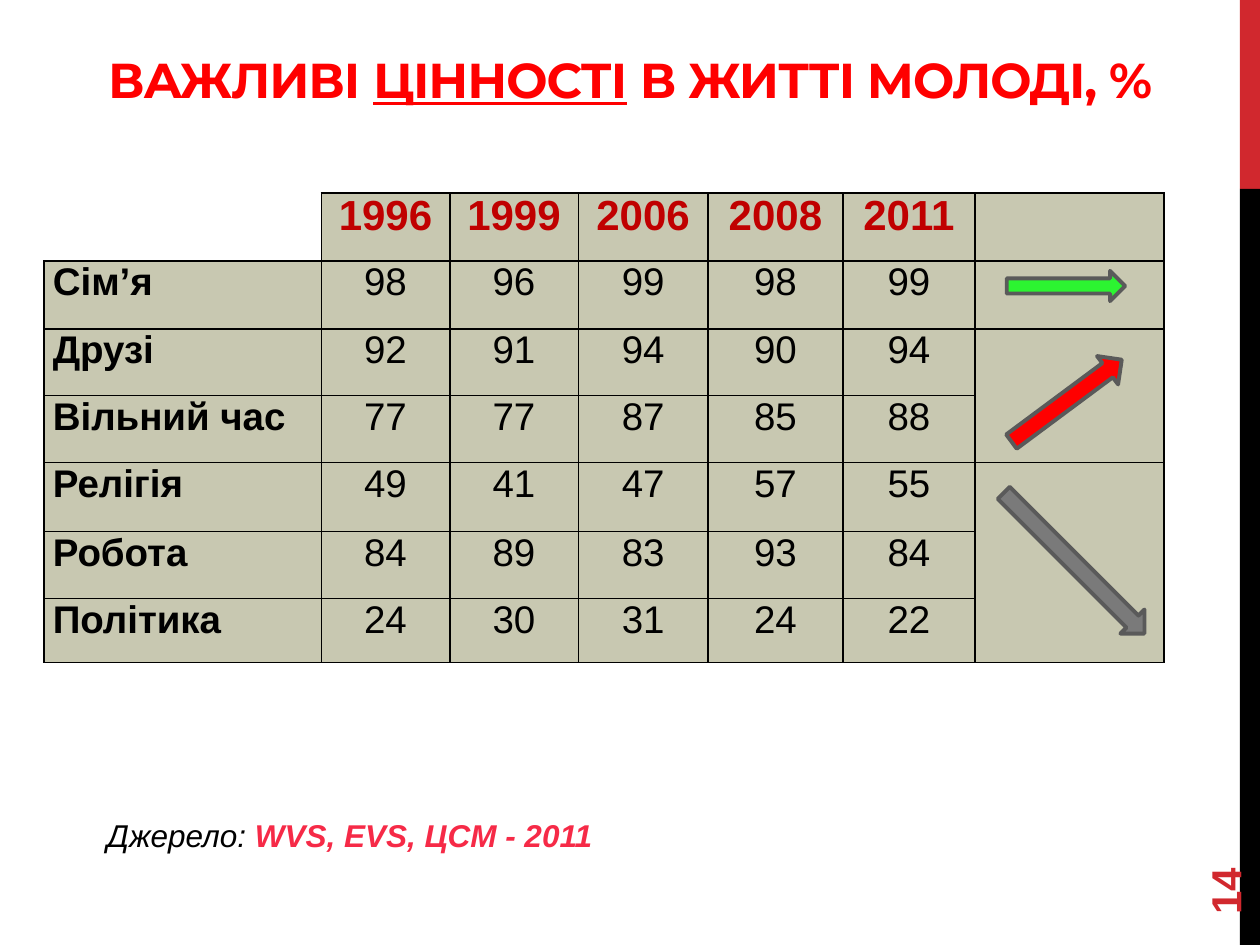
from dataclasses import dataclass
from typing import Optional

from lxml.etree import SubElement
from pptx import Presentation
from pptx.dml.color import RGBColor
from pptx.enum.shapes import MSO_SHAPE
from pptx.enum.text import MSO_ANCHOR, PP_ALIGN
from pptx.oxml.ns import qn
from pptx.util import Inches, Pt

GRID_COLUMNS, GRID_ROWS = 100, 75
SLIDE_WIDTH, SLIDE_HEIGHT = Inches(10), Inches(7.5)
BLACK, WHITE, RED, ACCENT = "000000", "FFFFFF", "FF0000", "D1282E"
CELL_FILL, YEAR_COLOR, ARROW_OUTLINE = "C8C8B1", "C00000", "5A5A5A"

YEARS = ["1996", "1999", "2006", "2008", "2011"]
VALUES = {
    "Сім’я": [98, 96, 99, 98, 99],
    "Друзі": [92, 91, 94, 90, 94],
    "Вільний час": [77, 77, 87, 85, 88],
    "Релігія": [49, 41, 47, 57, 55],
    "Робота": [84, 89, 83, 93, 84],
    "Політика": [24, 30, 31, 24, 22],
}
COLUMN_SPANS = [22, 10.2, 10.2, 10.3, 10.7, 10.5, 15]
ROW_SPANS = [5.4, 5.4, 5.3, 5.3, 5.5, 5.3, 5.1]
TREND_MERGES = [(2, 3), (4, 6)]


@dataclass
class Area:
    column: float
    row: float
    columns: float
    rows: float

    def place(self) -> tuple:
        return (across(self.column), down(self.row),
                across(self.columns), down(self.rows))


@dataclass
class Block:
    area: Area
    kind: MSO_SHAPE
    fill: str
    outline: Optional[str] = None
    rotation: float = 0


@dataclass
class Phrase:
    text: str
    size: float
    color: str = BLACK
    font: str = "Arial"
    bold: bool = False
    italic: bool = False
    underline: bool = False
    spacing: int = 0


@dataclass
class Caption:
    area: Area
    phrases: list
    align: PP_ALIGN = PP_ALIGN.LEFT
    anchor: MSO_ANCHOR = MSO_ANCHOR.TOP
    rotation: float = 0


def across(columns: float) -> int:
    return round(SLIDE_WIDTH * columns / GRID_COLUMNS)


def down(rows: float) -> int:
    return round(SLIDE_HEIGHT * rows / GRID_ROWS)


def color(value: str) -> RGBColor:
    return RGBColor.from_string(value)


def draw_block(slide, block: Block) -> None:
    shape = slide.shapes.add_shape(block.kind, *block.area.place())
    shape.shadow.inherit = False
    shape.rotation = block.rotation
    shape.fill.solid()
    shape.fill.fore_color.rgb = color(block.fill)
    if block.outline:
        shape.line.color.rgb = color(block.outline)
        shape.line.width = Pt(2.25)
    else:
        shape.line.fill.background()


def write(paragraph, phrases: list, align: PP_ALIGN) -> None:
    paragraph.alignment = align
    for phrase in phrases:
        run = paragraph.add_run()
        run.text = phrase.text
        font = run.font
        font.size, font.name = Pt(phrase.size), phrase.font
        font.bold, font.italic = phrase.bold, phrase.italic
        font.underline = phrase.underline
        font.color.rgb = color(phrase.color)
        if phrase.spacing:
            run._r.get_or_add_rPr().set("spc", str(phrase.spacing))


def draw_caption(slide, caption: Caption) -> None:
    box = slide.shapes.add_textbox(*caption.area.place())
    box.rotation = caption.rotation
    box.text_frame.word_wrap = True
    box.text_frame.vertical_anchor = caption.anchor
    write(box.text_frame.paragraphs[0], caption.phrases, caption.align)


def border(cell, left: str = BLACK, right: str = BLACK,
           top: str = BLACK, bottom: str = BLACK) -> None:
    properties = cell._tc.get_or_add_tcPr()
    for side, value in zip("LRTB", (left, right, top, bottom)):
        edge = SubElement(properties, qn(f"a:ln{side}"), w=str(Pt(1)))
        SubElement(SubElement(edge, qn("a:solidFill")), qn("a:srgbClr"), val=value)


def cell_phrase(text: str, row: int, column: int) -> Phrase:
    if row == 0:
        return Phrase(text, 24, YEAR_COLOR, bold=True)
    return Phrase(text, 22, bold=column == 0)


def draw_values(slide, area: Area) -> None:
    lines = [["", *YEARS, ""]]
    lines += [[name, *map(str, shares), ""] for name, shares in VALUES.items()]
    table = slide.shapes.add_table(len(lines), len(lines[0]), *area.place()).table
    table.first_row = table.horz_banding = False
    for column, span in zip(table.columns, COLUMN_SPANS):
        column.width = across(span)
    for row, span in zip(table.rows, ROW_SPANS):
        row.height = down(span)
    for r, line in enumerate(lines):
        for c, text in enumerate(line):
            cell = table.cell(r, c)
            if r == c == 0:
                border(cell, left=WHITE, top=WHITE)
                cell.fill.background()
                continue
            border(cell)
            cell.fill.solid()
            cell.fill.fore_color.rgb = color(CELL_FILL)
            if text:
                cell.margin_left = cell.margin_right = across(0.7)
                cell.margin_top = cell.margin_bottom = 0
                align = PP_ALIGN.CENTER if c else PP_ALIGN.LEFT
                write(cell.text_frame.paragraphs[0], [cell_phrase(text, r, c)], align)
    trend = len(COLUMN_SPANS) - 1
    for first, last in TREND_MERGES:
        table.cell(first, trend).merge(table.cell(last, trend))


def title_phrase(text: str, underline: bool = False) -> Phrase:
    return Phrase(text, 28, RED, "Montserrat", bold=True,
                  underline=underline, spacing=-60)


SIDE_BARS = [
    Block(Area(98.4, 0, 1.6, 15), MSO_SHAPE.RECTANGLE, ACCENT),
    Block(Area(98.4, 15, 1.6, 60), MSO_SHAPE.RECTANGLE, BLACK),
]
TREND_ARROWS = [
    Block(Area(79.9, 21.5, 9.4, 2.4), MSO_SHAPE.RIGHT_ARROW, "2CF431", ARROW_OUTLINE),
    Block(Area(79.2, 30.4, 10.9, 2.8), MSO_SHAPE.RIGHT_ARROW, RED, ARROW_OUTLINE, 323.4),
    Block(Area(83.9, 36.8, 2.7, 15.8), MSO_SHAPE.DOWN_ARROW, "7A7A7A", ARROW_OUTLINE, 315),
]
TITLE = Caption(
    Area(5, 3, 90, 6.1),
    [title_phrase("ВАЖЛИВІ "), title_phrase("ЦІННОСТІ", True),
     title_phrase(" В ЖИТТІ МОЛОДІ, %")],
    PP_ALIGN.CENTER, MSO_ANCHOR.BOTTOM)
SOURCE = Caption(
    Area(7.5, 64.3, 78, 4),
    [Phrase("Джерело: ", 18, italic=True),
     Phrase("WVS, EVS, ЦСМ - 2011", 18, "F62A47", bold=True, italic=True)])
PAGE_NUMBER = Caption(
    Area(90, 64.4, 14.4, 4), [Phrase("14", 24, ACCENT, bold=True)],
    anchor=MSO_ANCHOR.MIDDLE, rotation=270)


def main() -> None:
    deck = Presentation()
    deck.slide_width, deck.slide_height = SLIDE_WIDTH, SLIDE_HEIGHT
    slide = deck.slides.add_slide(deck.slide_layouts[6])
    for bar in SIDE_BARS:
        draw_block(slide, bar)
    draw_caption(slide, TITLE)
    draw_values(slide, Area(3.5, 15.3, sum(COLUMN_SPANS), sum(ROW_SPANS)))
    draw_caption(slide, SOURCE)
    for arrow in TREND_ARROWS:
        draw_block(slide, arrow)
    draw_caption(slide, PAGE_NUMBER)
    deck.save("out.pptx")


if __name__ == "__main__":
    main()
